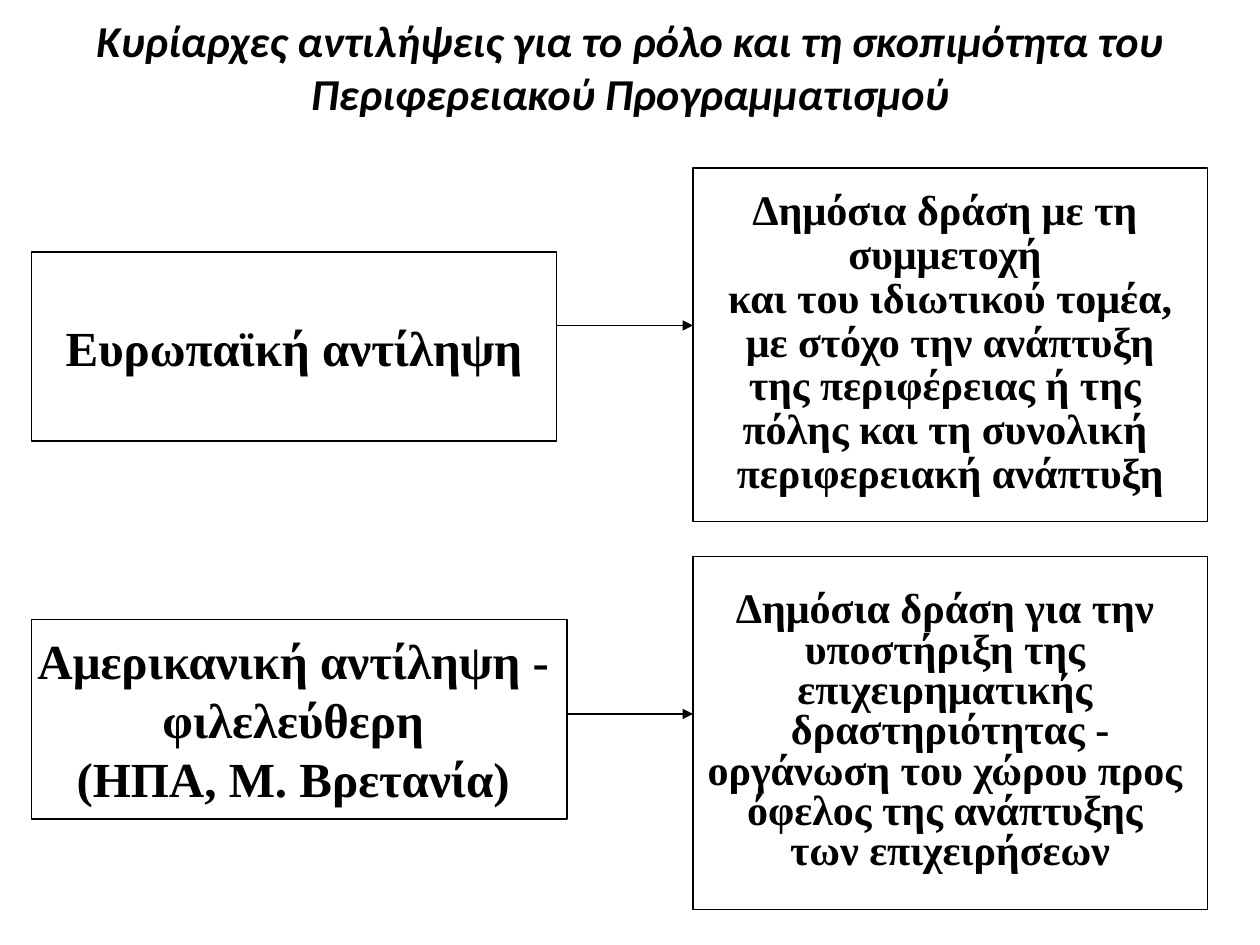
from lxml import etree
from pptx import Presentation
from pptx import util as u
from pptx.dml.color import RGBColor
from pptx.enum import shapes, text
from pptx.oxml import ns

BLACK = RGBColor(0, 0, 0)
COLUMNS, ROWS = 120, 90
CELL = u.Inches(10) // COLUMNS
LINE_WIDTH = u.Pt(0.75)

TITLE = "Κυρίαρχες αντιλήψεις για το ρόλο και τη σκοπιμότητα του Περιφερειακού Προγραμματισμού"

VIEWS = [
    {
        "name": ["Ευρωπαϊκή αντίληψη"],
        "name_box": (3, 24, 50, 18),
        "action": [
            "Δημόσια δράση με τη ",
            "συμμετοχή ",
            "και του ιδιωτικού τομέα,",
            " με στόχο την ανάπτυξη ",
            "της περιφέρειας ή της ",
            "πόλης και τη συνολική ",
            "περιφερειακή ανάπτυξη",
        ],
        "action_box": (66, 16, 49, 33.7),
        "gap": 1,
        "arrow_row": 31,
    },
    {
        "name": ["Αμερικανική αντίληψη - ", "φιλελεύθερη ", "(ΗΠΑ, Μ. Βρετανία) "],
        "name_box": (3, 59, 51, 19),
        "action": [
            "Δημόσια δράση για την ",
            "υποστήριξη της ",
            "επιχειρηματικής ",
            "δραστηριότητας -",
            "οργάνωση του χώρου προς ",
            "όφελος της ανάπτυξης ",
            "των επιχειρήσεων",
        ],
        "action_box": (66, 53, 49, 33.6),
        "gap": 0,
        "arrow_row": 68,
    },
]


def cells(*counts):
    return [u.Emu(round(count * CELL)) for count in counts]


def format_paragraph(paragraph, font_name, size):
    paragraph.alignment = text.PP_ALIGN.CENTER
    font = paragraph.font
    font.name, font.size, font.bold = font_name, u.Pt(size), True
    font.color.rgb = BLACK


def add_title(slide, box):
    title = slide.shapes.title
    title.left, title.top, title.width, title.height = cells(*box)
    frame = title.text_frame
    frame.text = TITLE
    frame.auto_size = text.MSO_AUTO_SIZE.NONE
    frame.vertical_anchor = text.MSO_ANCHOR.BOTTOM
    paragraph = frame.paragraphs[0]
    format_paragraph(paragraph, "Calibri", 25.2)
    paragraph.font.italic = True


def add_box(slide, box, lines, size, spacing=1.0, gap=0):
    shape = slide.shapes.add_shape(shapes.MSO_SHAPE.RECTANGLE, *cells(*box))
    shape.shadow.inherit = False
    shape.fill.background()
    shape.line.color.rgb = BLACK
    shape.line.width = LINE_WIDTH
    frame = shape.text_frame
    frame.word_wrap = False
    frame.vertical_anchor = text.MSO_ANCHOR.MIDDLE
    for index, line in enumerate(lines):
        paragraph = frame.add_paragraph() if index else frame.paragraphs[0]
        paragraph.text = line
        format_paragraph(paragraph, "Times New Roman", size)
        paragraph.line_spacing = spacing
        paragraph.space_before = paragraph.space_after = u.Pt(gap)


def add_arrow(slide, start, end, row):
    arrow = slide.shapes.add_connector(
        shapes.MSO_CONNECTOR.STRAIGHT, *cells(start, row, end, row)
    )
    arrow.line.color.rgb = BLACK
    arrow.line.width = LINE_WIDTH
    etree.SubElement(arrow.line._get_or_add_ln(), ns.qn("a:tailEnd"), type="triangle")
    etree.SubElement(arrow._element.spPr, ns.qn("a:effectLst"))


def add_view(slide, view):
    left, _, width, _ = view["name_box"]
    add_box(slide, view["name_box"], view["name"], 28)
    add_box(slide, view["action_box"], view["action"], 24, 0.8, view["gap"])
    add_arrow(slide, left + width, view["action_box"][0], view["arrow_row"])


def main():
    presentation = Presentation()
    presentation.slide_width, presentation.slide_height = cells(COLUMNS, ROWS)
    slide = presentation.slides.add_slide(presentation.slide_layouts.get_by_name("Title Only"))
    add_title(slide, (0, 0, COLUMNS, 12))
    for view in VIEWS:
        add_view(slide, view)
    presentation.save("out.pptx")


if __name__ == "__main__":
    main()
